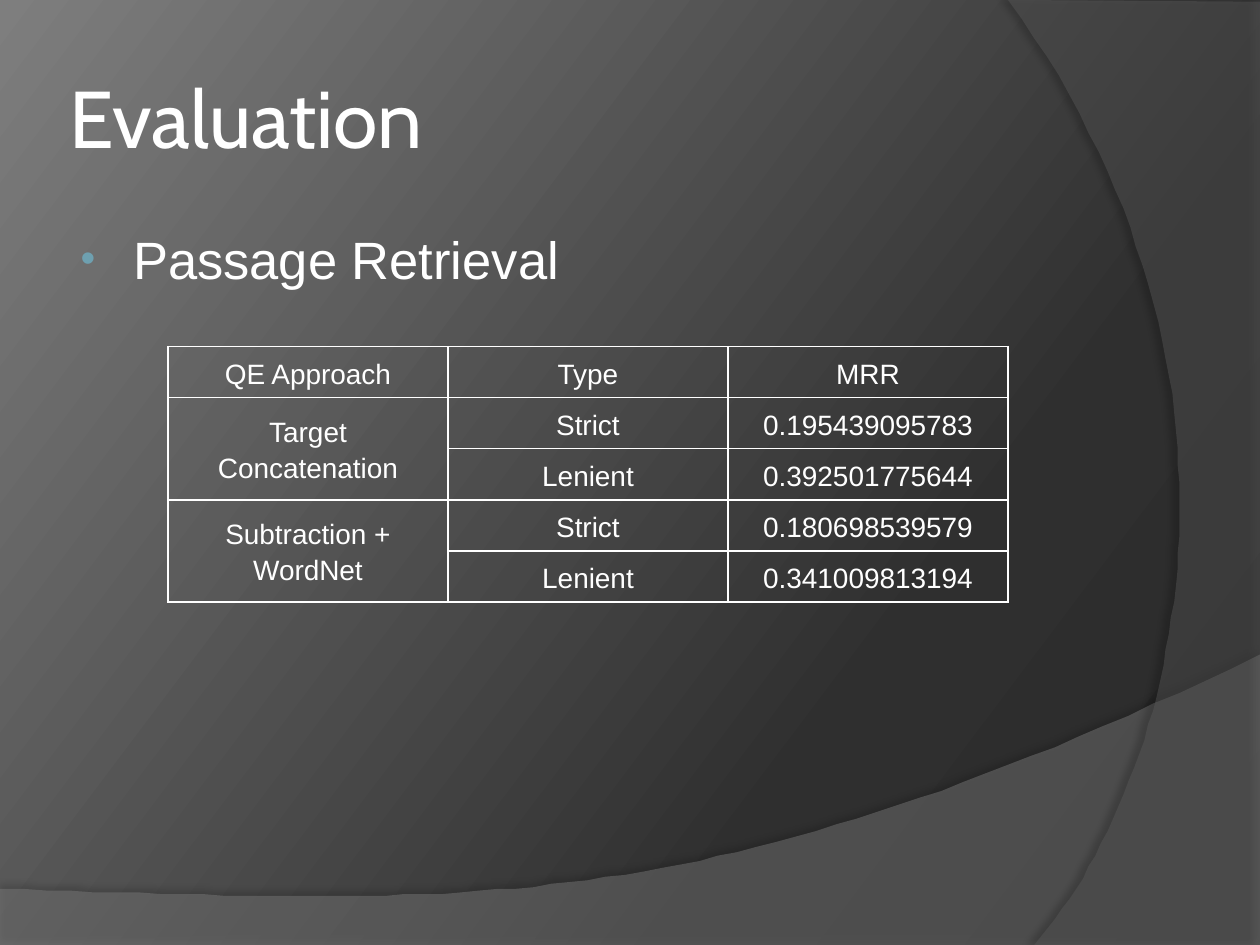
import copy

import pptx
import pptx.dml.color
import pptx.enum.text
import pptx.oxml
import pptx.oxml.ns
import pptx.util
from pptx.util import Pt

NAMESPACE = pptx.oxml.ns.nsdecls("a")
qn = pptx.oxml.ns.qn


def color(hex_text):
    return pptx.dml.color.RGBColor.from_string(hex_text)


def element(xml):
    """Parse one drawing element whose tag is followed by a space or '>'."""
    tag = xml[1:].split(">")[0].split(" ")[0]
    return pptx.oxml.parse_xml(xml.replace(tag, f"{tag} {NAMESPACE}", 1))


def bezier(start, first, second, end, steps=60):
    """Points along a cubic curve, without its start."""
    points = []
    for step in range(1, steps + 1):
        t = step / steps
        weights = ((1 - t) ** 3, 3 * t * (1 - t) ** 2, 3 * t * t * (1 - t), t ** 3)
        points.append(tuple(
            sum(weight * value for weight, value in zip(weights, axis))
            for axis in zip(start, first, second, end)))
    return points


class SlideBuilder:
    font = "Arial"
    title_font = "Cabin"
    ink = "FFFFFF"
    accent = "6EA0B0"

    def __init__(self, page):
        self.page = page

    def background(self, stops, angle):
        """Gradient fill, with the angle counted counter-clockwise."""
        fill = self.page.background.fill
        fill.gradient()
        fill.gradient_angle = angle
        stop_list = next(self.page._element.iter(qn("a:gsLst")))
        while len(stop_list) < len(stops):
            stop_list.append(copy.deepcopy(stop_list[-1]))
        for stop, (position, shade) in zip(fill.gradient_stops, stops):
            stop.position = position
            stop.color.rgb = color(shade)

    def wave(self, points, shade, opacity, shadow_opacity, shadow_distance, shadow_angle):
        """Translucent outline with a soft shadow."""
        outline = self.page.shapes.build_freeform(*points[0], scale=Pt(1))
        outline.add_line_segments(points[1:], close=True)
        shape = outline.convert_to_shape()
        shape.line.fill.background()
        shape.fill.solid()
        shape.fill.fore_color.rgb = color(shade)
        shape.shadow.inherit = False
        properties = shape._element.spPr
        fill_color = properties.find(qn("a:solidFill"))[0]
        fill_color.append(element(f'<a:alpha val="{opacity * 1000}"/>'))
        properties.find(qn("a:effectLst")).append(element(
            f'<a:outerShdw blurRad="{Pt(4)}" dist="{Pt(shadow_distance)}" '
            f'dir="{shadow_angle * 60000}" algn="ctr" rotWithShape="0">'
            f'<a:srgbClr val="000000"><a:alpha val="{shadow_opacity * 1000}"/></a:srgbClr>'
            '</a:outerShdw>'))

    def style(self, paragraph, size, font=None):
        paragraph.font.name = font or self.font
        paragraph.font.size = Pt(size)
        paragraph.font.color.rgb = color(self.ink)

    def text(self, words, left, top, width, height, size, font=None):
        frame = self.page.shapes.add_textbox(
            Pt(left), Pt(top), Pt(width), Pt(height)).text_frame
        frame.word_wrap = True
        paragraph = frame.paragraphs[0]
        paragraph.text = words
        self.style(paragraph, size, font)
        return frame

    def title(self, words, *place):
        frame = self.text(words, *place, size=46, font=self.title_font)
        frame.vertical_anchor = pptx.enum.text.MSO_ANCHOR.MIDDLE
        frame.margin_left = frame.margin_right = Pt(3.6)

    def bullet(self, words, *place):
        paragraph = self.text(words, *place, size=30).paragraphs[0]
        paragraph.space_before = Pt(6)
        properties = paragraph._p.get_or_add_pPr()
        properties.set("marL", str(Pt(33)))
        properties.set("indent", str(Pt(-30)))
        for xml in (f'<a:buClr><a:srgbClr val="{self.accent}"/></a:buClr>',
                    '<a:buSzPct val="80000"/>',
                    '<a:buFont typeface="Arial"/>',
                    '<a:buChar char="•"/>'):
            # Bullet marks stand before the paragraph's default run style.
            properties.find(qn("a:defRPr")).addprevious(element(xml))

    def cell(self, cell, words):
        cell.vertical_anchor = pptx.enum.text.MSO_ANCHOR.MIDDLE
        cell.margin_left = cell.margin_right = Pt(5)
        cell.margin_top = cell.margin_bottom = 0
        cell.fill.background()
        paragraph = cell.text_frame.paragraphs[0]
        paragraph.text = words
        paragraph.alignment = pptx.enum.text.PP_ALIGN.CENTER
        paragraph.line_spacing = 1.15
        self.style(paragraph, 16)
        properties = cell._tc.get_or_add_tcPr()
        for index, side in enumerate("LRTB"):
            properties.insert(index, element(
                f'<a:ln{side} w="{Pt(1)}"><a:solidFill><a:srgbClr val="{self.ink}"/>'
                f'</a:solidFill></a:ln{side}>'))

    def table(self, rows, left, top, column_width, row_height):
        """Grid in which an empty first cell joins the cell above it."""
        columns = len(rows[0])
        table = self.page.shapes.add_table(
            len(rows), columns, Pt(left), Pt(top),
            Pt(column_width * columns), Pt(row_height * len(rows))).table
        table.first_row = table.horz_banding = False
        for column in table.columns:
            column.width = Pt(column_width)
        for row_index, row in enumerate(rows):
            table.rows[row_index].height = Pt(row_height)
            for column_index, words in enumerate(row):
                self.cell(table.cell(row_index, column_index), words)
            if not row[0]:
                table.cell(row_index - 1, 0).merge(table.cell(row_index, 0))


def main():
    deck = pptx.Presentation()
    deck.slide_width, deck.slide_height = Pt(720), Pt(540)
    slide = SlideBuilder(deck.slides.add_slide(deck.slide_layouts[6]))

    slide.background([(0, "282828"), (0.3, "2F2F2F"), (1, "7E7E7E")], angle=143)
    bottom_edge = bezier((720, 374.4), (402.5, 525), (281.5, 517.7), (0, 507.6))
    slide.wave([(0, 507.6), (0, 540.7), (720, 540.7), (720, 374.4)] + bottom_edge[:-1],
               "7F7F7F", 45, 35, 3.5, 270)
    right_edge = bezier((591, 540), (673.2, 445.7), (733, 216), (576, 0))
    slide.wave([(720, 1.4), (720, 540), (591, 540)] + right_edge,
               "5E5E5E", 40, 45, 4, 180)

    slide.title("Evaluation", 36, 21.6, 588, 90)
    slide.bullet("Passage Retrieval", 36, 126, 588, 356.4)
    slide.table([
        ("QE Approach", "Type", "MRR"),
        ("Target Concatenation", "Strict", "0.195439095783"),
        ("", "Lenient", "0.392501775644"),
        ("Subtraction + WordNet", "Strict", "0.180698539579"),
        ("", "Lenient", "0.341009813194"),
    ], left=96, top=198, column_width=160, row_height=29.2)
    deck.save("out.pptx")


if __name__ == "__main__":
    main()
